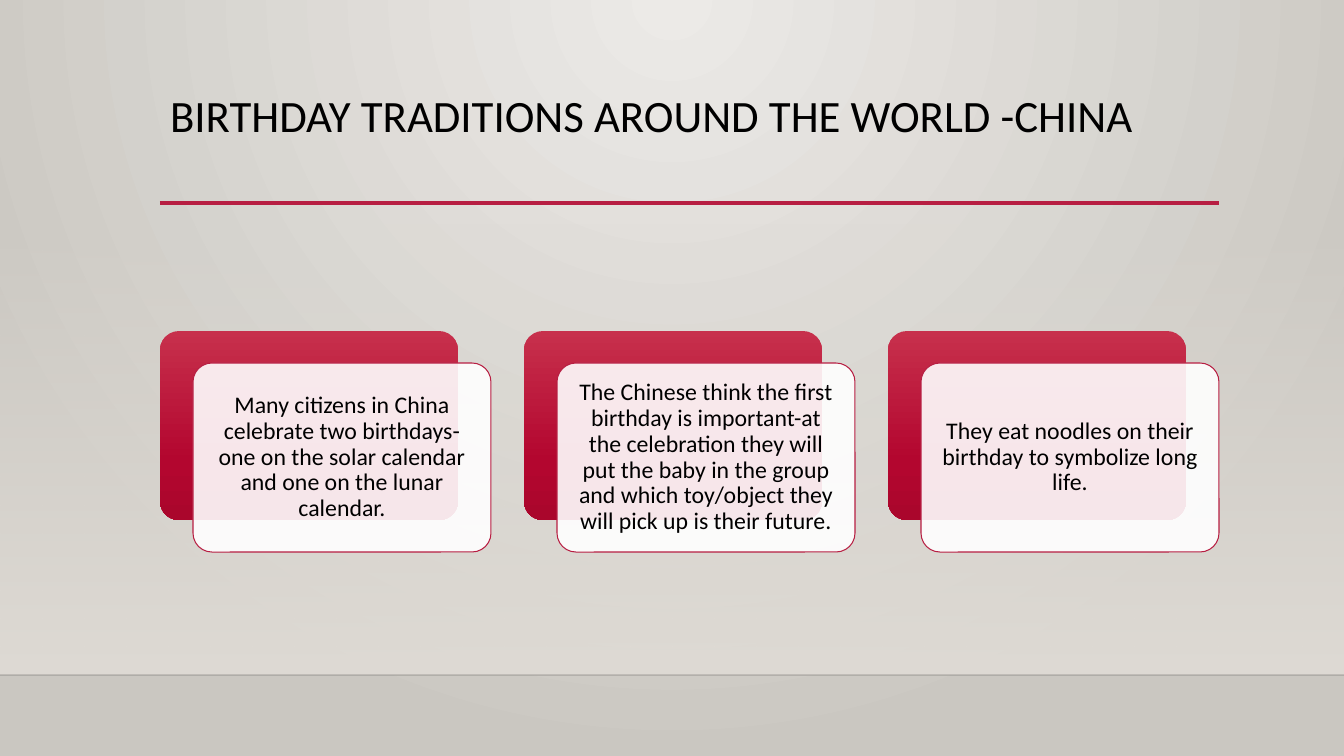
from lxml import etree
from pptx import Presentation
from pptx.dml.color import RGBColor
from pptx.enum.shapes import MSO_CONNECTOR, MSO_SHAPE
from pptx.enum.text import MSO_ANCHOR, MSO_AUTO_SIZE, PP_ALIGN
from pptx.oxml import parse_xml
from pptx.oxml.ns import nsdecls, qn
from pptx.util import Pt

PX = 914400 / 100.8
STRAIGHT = MSO_CONNECTOR.STRAIGHT
RECTANGLE = MSO_SHAPE.RECTANGLE
ROUNDED = MSO_SHAPE.ROUNDED_RECTANGLE
TOP, MIDDLE = MSO_ANCHOR.TOP, MSO_ANCHOR.MIDDLE
LEFT, CENTER = PP_ALIGN.LEFT, PP_ALIGN.CENTER
NO_FIT = MSO_AUTO_SIZE.NONE

BLACK = RGBColor(0x00, 0x00, 0x00)
WHITE = RGBColor(0xFF, 0xFF, 0xFF)
CRIMSON = RGBColor(0xB7, 0x1E, 0x42)
FLOOR_LINE = RGBColor(0x00, 0x00, 0x01)
WALL = RGBColor(0xDF, 0xDB, 0xD5)
GLOW = RGBColor(0xEC, 0xEA, 0xE7)
SHADE = RGBColor(0xCA, 0xC7, 0xC1)
RED_LIGHT = RGBColor(0xC7, 0x30, 0x4C)
RED_MID = RGBColor(0xB3, 0x06, 0x2F)
RED_DARK = RGBColor(0xAA, 0x06, 0x2C)

DOWNWARD = '<a:lin ang="5400000" scaled="0"/>'
FROM_TOP = ('<a:path path="circle">'
            '<a:fillToRect l="43000" t="0" r="43000" b="100000"/></a:path>')
CARD_STOPS = [(0, RED_LIGHT, 100), (69, RED_MID, 100), (100, RED_DARK, 100)]

TRADITIONS = [
    "Many citizens in China celebrate two birthdays-one on the solar calendar "
    "and one on the lunar calendar.",
    "The Chinese think the first birthday is important-at the celebration they "
    "will put the baby in the group and which toy/object they will pick up is "
    "their future.",
    "They eat noodles on their birthday to symbolize long life.",
]


def px(*lengths):
    """Turn pixel lengths into EMU."""
    return [round(length * PX) for length in lengths]


def set_values(target, values):
    """Set each attribute of the target from a dict."""
    for name, value in values.items():
        setattr(target, name, value)


def set_alpha(element, percent):
    """Give the solid colour inside an element an opacity."""
    colour = element.find(".//" + qn("a:srgbClr"))
    etree.SubElement(colour, qn("a:alpha")).set("val", str(percent * 1000))


def set_gradient(parent, stops, direction):
    """Replace the solid fill of an element by a gradient."""
    stop_xml = "".join(
        f'<a:gs pos="{place * 1000}"><a:srgbClr val="{colour}">'
        f'<a:alpha val="{alpha * 1000}"/></a:srgbClr></a:gs>'
        for place, colour, alpha in stops)
    gradient = parse_xml(f'<a:gradFill {nsdecls("a")} rotWithShape="1">'
                         f'<a:gsLst>{stop_xml}</a:gsLst>{direction}</a:gradFill>')
    parent.replace(parent.find(qn("a:solidFill")), gradient)


class SlideBuilder:
    """Holds the text style and the current slide."""

    font_format = {"name": "Calibri"}

    def __init__(self, page):
        """Keep the slide to draw on."""
        self.page = page

    def background(self, stops, direction):
        """Fill the slide background with a gradient."""
        self.page.background.fill.solid()
        set_gradient(self.page.element.find(".//" + qn("p:bgPr")), stops, direction)

    def put_text(self, box, text, size, frame_format, alignment):
        """Put one formatted paragraph into a shape."""
        frame = box.text_frame
        set_values(frame, {"word_wrap": True, "auto_size": NO_FIT, **frame_format})
        para = frame.paragraphs[0]
        set_values(para, {"alignment": alignment, "line_spacing": 0.9})
        span = para.add_run()
        span.text = text
        set_values(span.font, {**self.font_format, "size": Pt(size)})
        span.font.color.rgb = BLACK

    def title(self, text, *bounds):
        """Place and fill the title placeholder."""
        box = self.page.shapes.title
        set_values(box, dict(zip(("left", "top", "width", "height"), px(*bounds))))
        self.put_text(box, text, 32, {"vertical_anchor": TOP}, LEFT)

    def shape(self, kind, bounds, colour):
        """Add a plain filled shape without an outline."""
        box = self.page.shapes.add_shape(kind, *px(*bounds))
        box.shadow.inherit = False
        box.fill.solid()
        box.fill.fore_color.rgb = colour
        box.line.fill.background()
        if kind == ROUNDED:
            box.adjustments[0] = 0.1
        return box

    def gradient_shape(self, kind, bounds, stops):
        """Add a shape with a downward gradient."""
        box = self.shape(kind, bounds, WHITE)
        set_gradient(box.element.spPr, stops, DOWNWARD)

    def rule(self, left, right, top, colour, width, opacity=100):
        """Add a horizontal line."""
        line = self.page.shapes.add_connector(STRAIGHT, *px(left, top, right, top))
        line.line.color.rgb = colour
        line.line.width = Pt(width)
        properties = line.element.spPr
        set_alpha(properties, opacity)
        etree.SubElement(properties, qn("a:effectLst"))

    def card(self, left, top, text):
        """Add a red panel with a translucent text card in front."""
        width, height = 298, 189
        self.gradient_shape(ROUNDED, (left, top, width, height), CARD_STOPS)
        box = self.shape(ROUNDED, (left + 33, top + 32, width, height), WHITE)
        set_alpha(box.element.spPr, 90)
        box.line.color.rgb = CRIMSON
        box.line.width = Pt(0.75)
        inset, = px(12)
        sides = ("margin_left", "margin_top", "margin_right", "margin_bottom")
        frame_format = {"vertical_anchor": MIDDLE, **dict.fromkeys(sides, inset)}
        self.put_text(box, text, 17, frame_format, CENTER)


def main():
    """Build and save the slide."""
    deck = Presentation()
    deck.slide_width, deck.slide_height = px(1344, 756)
    builder = SlideBuilder(deck.slides.add_slide(deck.slide_layouts[5]))
    builder.background([(0, GLOW, 100), (100, SHADE, 100)], FROM_TOP)
    builder.gradient_shape(RECTANGLE, (0, 223, 1344, 452),
                           [(0, WALL, 0), (100, WALL, 100)])
    builder.rule(0, 1344, 675, FLOOR_LINE, 1, 20)
    builder.rule(160, 1219, 203, CRIMSON, 2.5)
    builder.title("BIRTHDAY TRADITIONS AROUND THE WORLD -CHINA", 160, 89, 1059, 116)
    for index, tradition in enumerate(TRADITIONS):
        builder.card(160 + index * 364, 331, tradition)
    deck.save("out.pptx")


if __name__ == "__main__":
    main()
